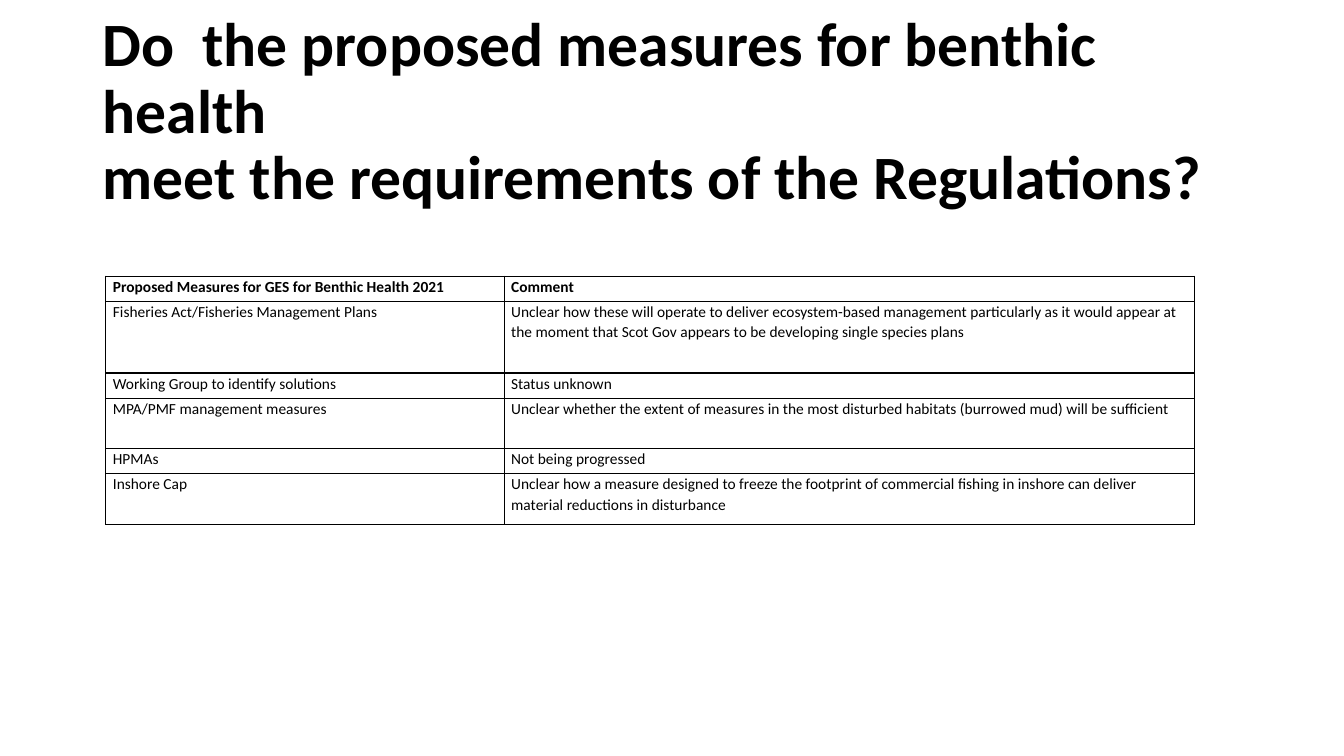
from lxml.etree import SubElement
from pptx import Presentation
from pptx.dml.color import RGBColor
from pptx.enum.text import MSO_ANCHOR, MSO_AUTO_SIZE, PP_ALIGN
from pptx.oxml.ns import qn
from pptx.util import Inches, Pt

BLACK = RGBColor(0x00, 0x00, 0x00)

QUESTION = ("Do  the proposed measures for benthic health\v"
            "meet the requirements of the Regulations?")
COLUMN_WIDTHS = (3.95, 6.85)
# Row height, proposed measure, comment
MEASURES = [
    (0.25, "Proposed Measures for GES for Benthic Health 2021", "Comment"),
    (0.71, "Fisheries Act/Fisheries Management Plans",
     "Unclear how these will operate to deliver ecosystem-based management "
     "particularly as it would appear at the moment that Scot Gov appears to be "
     "developing single species plans"),
    (0.25, "Working Group to identify solutions", "Status unknown"),
    (0.5, "MPA/PMF management measures",
     "Unclear whether the extent of measures in the most disturbed habitats "
     "(burrowed mud) will be sufficient"),
    (0.25, "HPMAs", "Not being progressed"),
    (0.5, "Inshore Cap",
     "Unclear how a measure designed to freeze the footprint of commercial fishing "
     "in inshore can deliver material reductions in disturbance"),
]


class SlideBuilder:
    font_name = "Calibri"
    title_size = Pt(44)
    cell_size = Pt(11)
    border_width = Pt(1)

    def __init__(self, slide):
        self.slide = slide

    def format_text(self, frame, size, bold, line_spacing):
        for paragraph in frame.paragraphs:
            paragraph.alignment = PP_ALIGN.LEFT
            paragraph.line_spacing = line_spacing
            for run in paragraph.runs:
                run.font.name = self.font_name
                run.font.size = size
                run.font.bold = bold
                run.font.color.rgb = BLACK

    def title(self, text, left, top, width, height):
        heading = self.slide.shapes.title
        heading.left, heading.top = Inches(left), Inches(top)
        heading.width, heading.height = Inches(width), Inches(height)
        frame = heading.text_frame
        frame.text = text
        frame.word_wrap = True
        frame.auto_size = MSO_AUTO_SIZE.NONE
        frame.vertical_anchor = MSO_ANCHOR.MIDDLE
        self.format_text(frame, self.title_size, True, 0.9)

    def table(self, rows, column_widths, left, top):
        total_height = sum(height for height, *_ in rows)
        table = self.slide.shapes.add_table(
            len(rows), len(column_widths), Inches(left), Inches(top),
            Inches(sum(column_widths)), Inches(total_height)).table
        table.first_row = table.horz_banding = False
        for column, width in zip(table.columns, column_widths):
            column.width = Inches(width)
        for row_index, (height, *texts) in enumerate(rows):
            table.rows[row_index].height = Inches(height)
            for column_index, text in enumerate(texts):
                self.cell(table.cell(row_index, column_index), text, row_index == 0)

    def cell(self, cell, text, bold):
        cell.margin_left = cell.margin_right = Inches(0.07)
        cell.margin_top = cell.margin_bottom = 0
        cell.text_frame.text = text
        self.format_text(cell.text_frame, self.cell_size, bold, 1.07)
        cell.text_frame.paragraphs[0].space_after = Pt(8)
        self.borders(cell)
        cell.fill.background()

    def borders(self, cell):
        properties = cell._tc.get_or_add_tcPr()
        for side in ("a:lnL", "a:lnR", "a:lnT", "a:lnB"):
            line = SubElement(properties, qn(side), w=str(self.border_width))
            fill = SubElement(line, qn("a:solidFill"))
            SubElement(fill, qn("a:srgbClr"), val=str(BLACK))


def main():
    presentation = Presentation()
    presentation.slide_width = Inches(13.33)
    presentation.slide_height = Inches(7.5)
    title_only = presentation.slide_layouts[5]
    builder = SlideBuilder(presentation.slides.add_slide(title_only))
    builder.title(QUESTION, 0.92, 0.4, 11.5, 1.45)
    builder.table(MEASURES, COLUMN_WIDTHS, 1.05, 2.74)
    presentation.save("out.pptx")


if __name__ == "__main__":
    main()
